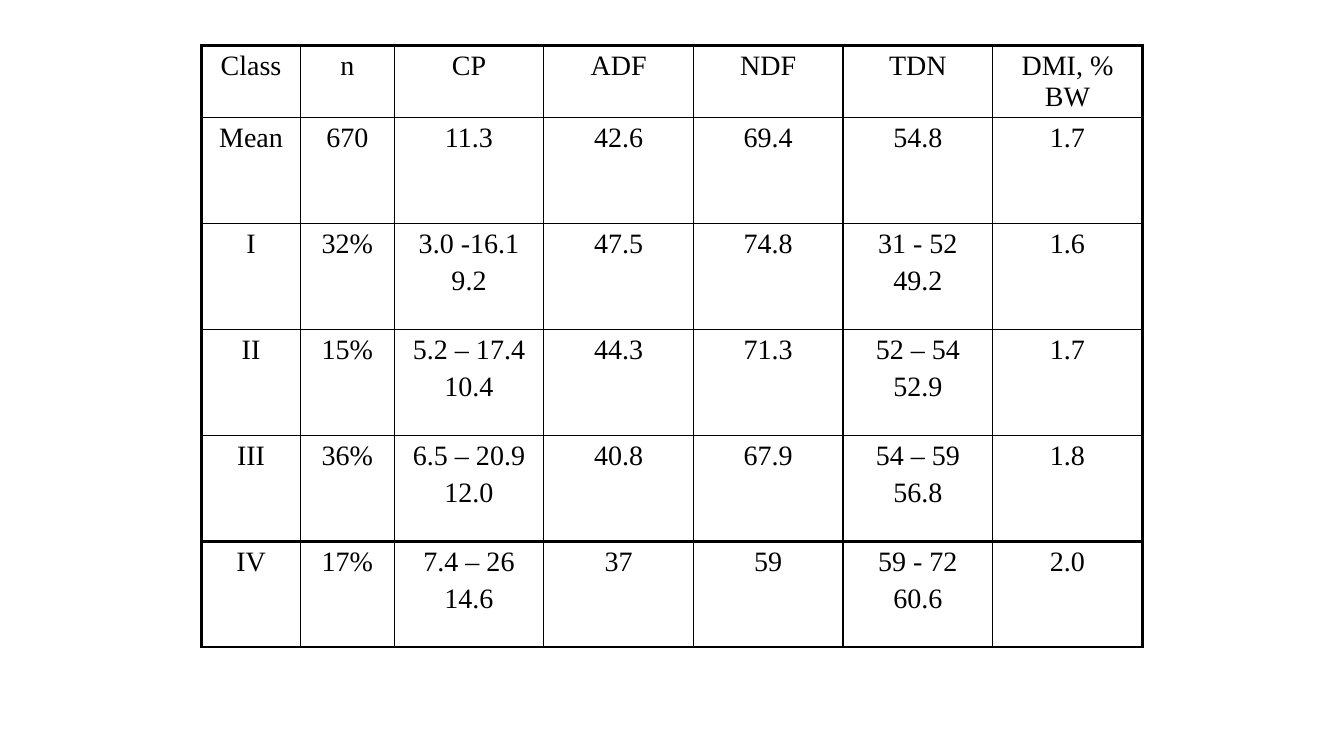
from lxml import etree
from pptx import Presentation
from pptx.dml.color import RGBColor
from pptx.enum.text import PP_ALIGN
from pptx.oxml.ns import qn
from pptx.util import Inches, Pt

CENTER = PP_ALIGN.CENTER
FONT = "Times New Roman"
INK = "000000"
THIN, THICK = 1, 2.25

# Table place, column widths and row heights
LEFT, TOP, WIDTH = 2, 0.45, 9.33
SIDE = [0.98, 0.93]
COLS = SIDE + [(WIDTH - sum(SIDE)) / 5] * 5
ROWS = [0.72] + [1.05] * 5

# A line break in a cell starts a new paragraph
DATA = [
    ["Class", "n", "CP", "ADF", "NDF", "TDN", "DMI, % BW"],
    ["Mean", "670", "11.3", "42.6", "69.4", "54.8", "1.7"],
    ["I", "32%", "3.0 -16.1\n9.2", "47.5", "74.8", "31 - 52\n49.2", "1.6"],
    ["II", "15%", "5.2 – 17.4\n10.4", "44.3", "71.3", "52 – 54\n52.9", "1.7"],
    ["III", "36%", "6.5 – 20.9\n12.0", "40.8", "67.9", "54 – 59\n56.8", "1.8"],
    ["IV", "17%", "7.4 – 26\n14.6", "37", "59", "59 - 72\n60.6", "2.0"],
]


def color(code):
    return RGBColor.from_string(code)


def set_text(cell, text):
    cell.text_frame.text = text
    for para in cell.text_frame.paragraphs:
        para.alignment = CENTER
        # Space before, as a share of the line height
        props = para._p.get_or_add_pPr()
        space = etree.SubElement(props, qn("a:spcBef"))
        etree.SubElement(space, qn("a:spcPct"), val="20000")
        for run in para.runs:
            run.font.name = FONT
            run.font.size = Pt(20)
            run.font.color.rgb = color(INK)


def set_edge(cell, side, width):
    props = cell._tc.get_or_add_tcPr()
    line = etree.SubElement(props, qn(f"a:ln{side}"), w=str(Pt(width)))
    fill = etree.SubElement(line, qn("a:solidFill"))
    etree.SubElement(fill, qn("a:srgbClr"), val=INK)


def set_edges(cell, row, col):
    # Thick frame, and a thick rule above the last row
    last = len(ROWS) - 1
    thick = {
        "L": col == 0,
        "R": col == len(COLS) - 1,
        "T": row in (0, last),
        "B": row >= last - 1,
    }
    for side, heavy in thick.items():
        set_edge(cell, side, THICK if heavy else THIN)


def add_grid(slide):
    frame = slide.shapes.add_table(
        len(ROWS), len(COLS), Inches(LEFT), Inches(TOP),
        Inches(WIDTH), Inches(sum(ROWS)))
    table = frame.table
    table.first_row = False
    table.horz_banding = False
    for col, width in zip(table.columns, COLS):
        col.width = Inches(width)
    for row, height in zip(table.rows, ROWS):
        row.height = Inches(height)
    for r, line in enumerate(DATA):
        for c, text in enumerate(line):
            cell = table.cell(r, c)
            set_text(cell, text)
            set_edges(cell, r, c)
            cell.fill.background()


def main():
    deck = Presentation()
    deck.slide_width = Inches(13.33)
    deck.slide_height = Inches(7.5)
    slide = deck.slides.add_slide(deck.slide_layouts[6])

    # Table
    add_grid(slide)
    deck.save("out.pptx")


if __name__ == "__main__":
    main()
